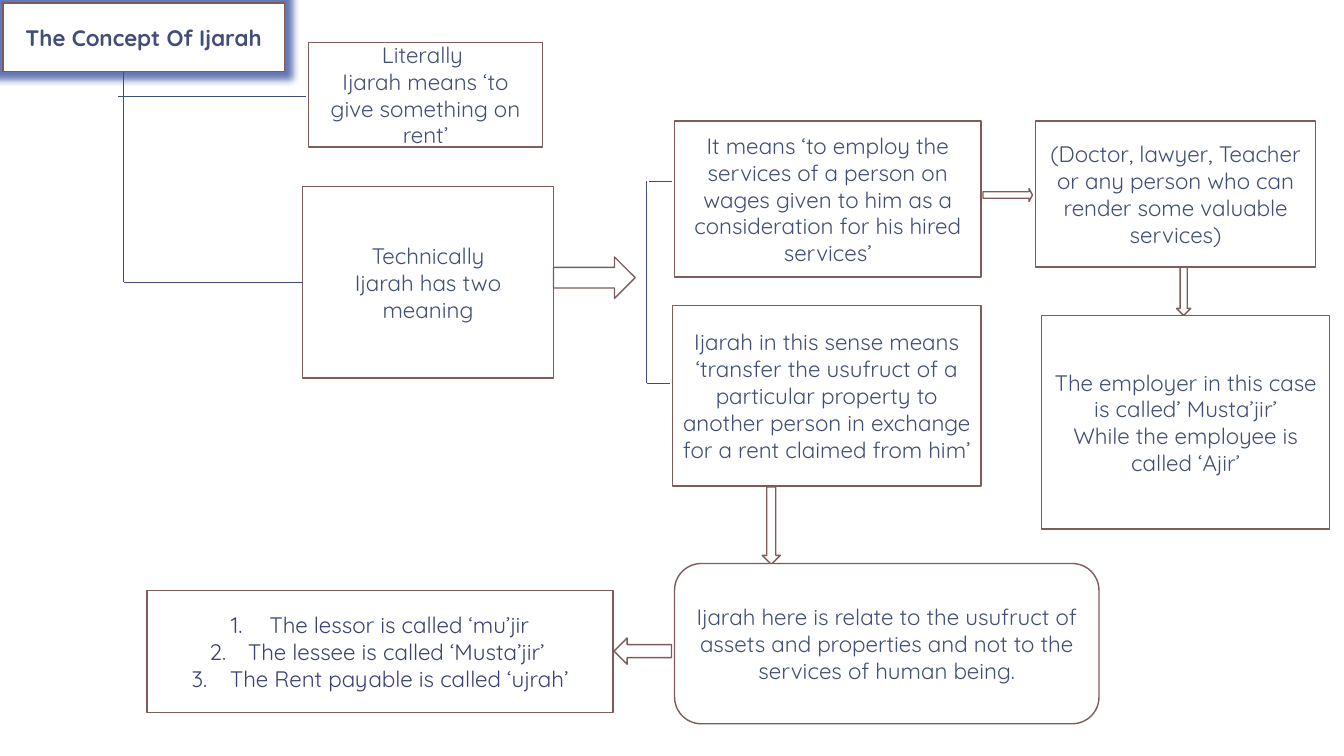
"""Build the slide that maps the concept of Ijarah as a flow diagram."""
from dataclasses import dataclass

from lxml import etree
from pptx import Presentation
from pptx.dml.color import RGBColor
from pptx.enum.shapes import MSO_CONNECTOR, MSO_SHAPE
from pptx.enum.text import MSO_ANCHOR, MSO_AUTO_SIZE, PP_ALIGN
from pptx.oxml.ns import qn
from pptx.util import Inches, Pt

RECT, ROUNDED = MSO_SHAPE.RECTANGLE, MSO_SHAPE.ROUNDED_RECTANGLE
RIGHT, LEFT, DOWN = MSO_SHAPE.RIGHT_ARROW, MSO_SHAPE.LEFT_ARROW, MSO_SHAPE.DOWN_ARROW
STRAIGHT = MSO_CONNECTOR.STRAIGHT
CENTER, MIDDLE = PP_ALIGN.CENTER, MSO_ANCHOR.MIDDLE
NO_FIT = MSO_AUTO_SIZE.NONE


@dataclass(frozen=True)
class Theme:
    """Colours, type and line widths of the slide."""
    font: str = "Quicksand"
    size: float = 16
    text: str = "414E77"
    list_text: str = "3B4172"
    fill: str = "FFFFFF"
    outline: str = "7E5C5C"
    glow: str = "6478B4"
    glow_radius: float = 11
    outline_width: float = 1
    branch_width: float = 0.5


@dataclass(frozen=True)
class Node:
    """An outlined preset shape with optional paragraphs."""
    left: float
    top: float
    width: float
    height: float
    paragraphs: tuple[str, ...] = ()
    preset: int = RECT
    adjustments: tuple[float, ...] = ()


@dataclass(frozen=True)
class Branch:
    """A thin line between two points."""
    x1: float
    y1: float
    x2: float
    y2: float


THEME = Theme()
TITLE = Node(0.03, 0.03, 2.79, 0.68, ("The Concept Of Ijarah",))
PARTIES = Node(1.46, 5.86, 4.62, 1.21, (
    "The lessor is called ‘mu’jir",
    "The lessee is called ‘Musta’jir’ ",
    "The Rent payable is called ‘ujrah’",
))
BRANCHES = (
    Branch(1.22, 0.71, 1.22, 2.8),
    Branch(3.04, 0.96, 1.17, 0.96),
    Branch(1.23, 2.8, 3, 2.8),
    Branch(6.67, 1.8, 6.44, 1.8),
    Branch(6.65, 3.8, 6.42, 3.8),
    Branch(6.41, 1.8, 6.41, 3.8),
)
NODES = (
    Node(3.06, 0.42, 2.32, 1.04,
         ("Literally ", "Ijarah means ‘to give something on rent’")),
    Node(3, 1.85, 2.49, 1.9, ("Technically", "Ijarah has two meaning")),
    Node(5.49, 2.55, 0.81, 0.41, preset=RIGHT),
    Node(6.69, 1.2, 3.04, 1.55,
         ("It means ‘to employ the services of a person on wages given to him "
          "as a consideration for his hired services’",)),
    Node(6.67, 3.03, 3.06, 1.79,
         ("Ijarah in this sense means ‘transfer the usufruct of a particular "
          "property to another person in exchange for a rent claimed from him’",)),
    Node(9.75, 1.87, 0.49, 0.13, preset=RIGHT, adjustments=(0.5, 0.265)),
    Node(10.27, 1.2, 2.78, 1.45,
         ("(Doctor, lawyer, Teacher or any person who can render some "
          "valuable services)",)),
    Node(11.67, 2.65, 0.14, 0.48, preset=DOWN),
    Node(10.33, 3.13, 2.86, 2.12,
         ("The employer in this case is called’ Musta’jir’",
          "While the employee is called ‘Ajir’")),
    Node(7.56, 4.83, 0.18, 0.77, preset=DOWN),
    Node(6.69, 5.59, 4.21, 1.59,
         ("Ijarah here is relate to the usufruct of assets and properties and "
          "not to the services of human being.",), ROUNDED),
    Node(6.09, 6.33, 0.57, 0.26, preset=LEFT),
)


def write(shape, paragraphs: tuple[str, ...], *, color: str = THEME.text,
          bold: bool = False, numbered: bool = False) -> None:
    """Fill a shape with centred paragraphs."""
    frame = shape.text_frame
    frame.word_wrap = True
    frame.auto_size = NO_FIT
    frame.vertical_anchor = MIDDLE
    for index, text in enumerate(paragraphs):
        paragraph = frame.add_paragraph() if index else frame.paragraphs[0]
        if numbered:
            properties = paragraph._p.get_or_add_pPr()
            properties.set("marL", str(Inches(0.38)))
            properties.set("indent", str(-Inches(0.38)))
            etree.SubElement(properties, qn("a:buAutoNum"), type="arabicPeriod")
        paragraph.alignment = CENTER
        paragraph.space_before = Pt(0)
        run = paragraph.add_run()
        run.text = text
        run.font.name = THEME.font
        run.font.size = Pt(THEME.size)
        run.font.bold = bold
        run.font.color.rgb = RGBColor.from_string(color)


def outline(shape) -> None:
    """Give a shape the common fill and outline."""
    shape.fill.solid()
    shape.fill.fore_color.rgb = RGBColor.from_string(THEME.fill)
    shape.line.color.rgb = RGBColor.from_string(THEME.outline)
    shape.line.width = Pt(THEME.outline_width)


def place(placeholder, node: Node) -> None:
    """Move a placeholder to its spot and style its frame."""
    placeholder.left, placeholder.top = Inches(node.left), Inches(node.top)
    placeholder.width, placeholder.height = Inches(node.width), Inches(node.height)
    outline(placeholder)


def add_glow(shape) -> None:
    """Surround a shape with a soft glow."""
    effects = etree.SubElement(shape._element.spPr, qn("a:effectLst"))
    glow = etree.SubElement(effects, qn("a:glow"), rad=str(Pt(THEME.glow_radius)))
    etree.SubElement(glow, qn("a:srgbClr"), val=THEME.glow)


def add_node(slide, node: Node) -> None:
    """Draw one box or block arrow."""
    shape = slide.shapes.add_shape(
        node.preset, Inches(node.left), Inches(node.top),
        Inches(node.width), Inches(node.height))
    shape.shadow.inherit = False
    outline(shape)
    for index, value in enumerate(node.adjustments):
        shape.adjustments[index] = value
    if node.paragraphs:
        write(shape, node.paragraphs)


def add_branch(slide, branch: Branch) -> None:
    """Draw one thin line."""
    connector = slide.shapes.add_connector(
        STRAIGHT, Inches(branch.x1), Inches(branch.y1),
        Inches(branch.x2), Inches(branch.y2))
    connector.line.color.rgb = RGBColor.from_string(THEME.text)
    connector.line.width = Pt(THEME.branch_width)
    etree.SubElement(connector._element.spPr, qn("a:effectLst"))


def main() -> None:
    """Build and save the slide."""
    deck = Presentation()
    deck.slide_width, deck.slide_height = Inches(13.33), Inches(7.5)
    slide = deck.slides.add_slide(deck.slide_layouts[1])
    title, parties = slide.shapes.title, slide.placeholders[1]
    place(title, TITLE)
    add_glow(title)
    write(title, TITLE.paragraphs, bold=True)
    place(parties, PARTIES)
    write(parties, PARTIES.paragraphs, color=THEME.list_text, numbered=True)
    for branch in BRANCHES:
        add_branch(slide, branch)
    for node in NODES:
        add_node(slide, node)
    deck.save("out.pptx")


if __name__ == "__main__":
    main()
